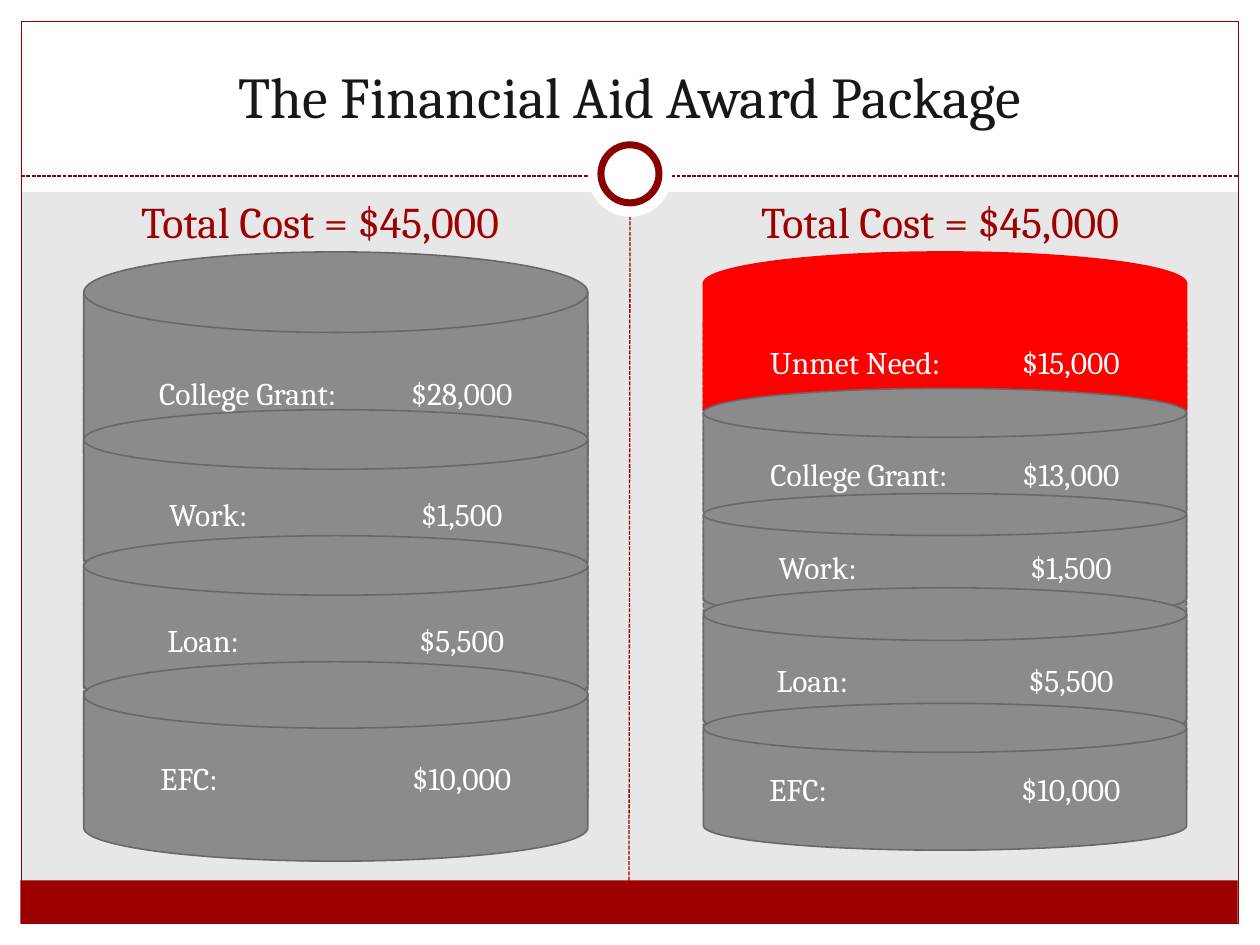
from lxml import etree
from pptx import Presentation
from pptx import util as u
from pptx.dml.color import RGBColor
from pptx.enum import dml, shapes, text
from pptx.oxml.ns import qn

FONT = "Cambria"
WHITE, RED, DARK_RED = "FFFFFF", "9C0000", "8A0000"
GRAY, EDGE, CAN_EDGE, UNMET = "8B8B8B", "686868", "676767", "FF0000"
W, H, MARGIN = 25.4, 19.05, 0.43
FOOTER_TOP = 17.75
STACK_TOP, CAN_TOP = 5.08, 5.29
TAB = 2.54

# Each stack: left, width, can height, heading left, layers (top, height, label, fill, edge)
STACKS = [
    (1.69, 10.16, 12.07, 0.84, [
        (STACK_TOP, 4.87, "College Grant:\t$28,000", GRAY, EDGE),
        (8.26, 3.6, "Work:\t\t$1,500", GRAY, EDGE),
        (10.8, 3.6, "Loan:\t\t$5,500", GRAY, EDGE),
        (13.34, 4.02, "EFC:\t\t$10,000", GRAY, EDGE),
    ]),
    (14.18, 9.74, 11.85, 13.34, [
        (STACK_TOP, 3.81, "Unmet Need:\t$15,000", UNMET, UNMET),
        (7.83, 2.96, "College Grant:\t$13,000", GRAY, EDGE),
        (9.95, 2.54, "Work:\t\t$1,500", GRAY, EDGE),
        (11.85, 3.18, "Loan:\t\t$5,500", GRAY, EDGE),
        (14.18, 2.96, "EFC:\t\t$10,000", GRAY, EDGE),
    ]),
]


def rgb(value):
    return RGBColor.from_string(value)


def set_line(line, color, width, dashed=False):
    line.color.rgb = rgb(color)
    line.width = u.Pt(width)
    if dashed:
        line.dash_style = dml.MSO_LINE.SQUARE_DOT


def add_shape(s, kind, box, fill=None, line=None):
    sp = s.shapes.add_shape(getattr(shapes.MSO_SHAPE, kind), *map(u.Cm, box))
    sp.shadow.inherit = False
    if fill:
        sp.fill.solid()
        sp.fill.fore_color.rgb = rgb(fill)
    else:
        sp.fill.background()
    if line:
        set_line(sp.line, *line)
    else:
        sp.line.fill.background()
    return sp


def add_dashed_line(s, start, end, color):
    line = s.shapes.add_connector(
        shapes.MSO_CONNECTOR.STRAIGHT, *map(u.Cm, start + end))
    set_line(line.line, color, 0.75, True)
    etree.SubElement(line._element.spPr, qn("a:effectLst"))
    return line


def write(sp, words, size, color, anchor="MIDDLE", before=0):
    tf = sp.text_frame
    tf.word_wrap = True
    tf.vertical_anchor = getattr(text.MSO_ANCHOR, anchor)
    p = tf.paragraphs[0]
    p.alignment = text.PP_ALIGN.CENTER
    p.space_before = u.Pt(before)
    p._p.get_or_add_pPr().set("defTabSz", str(u.Cm(TAB)))
    r = p.add_run()
    r.text = words
    r.font.color.rgb = rgb(color)
    for name, value in {"name": FONT, "size": u.Pt(size)}.items():
        setattr(r.font, name, value)


def add_text(s, box, *args):
    write(s.shapes.add_textbox(*map(u.Cm, box)), *args)


def add_frame(s):
    # White bands around the gray area
    for box in [(0, H - MARGIN, W, MARGIN), (0, 0, W, 3.87),
                (0, 0, MARGIN, H), (W - MARGIN, 0, MARGIN, H)]:
        add_shape(s, "RECTANGLE", box, WHITE)

    # Footer bar and border
    inner = W - 2 * MARGIN
    footer = add_shape(s, "RECTANGLE", (0.41, FOOTER_TOP, inner, 0.87), RED)
    add_shape(s, "RECTANGLE", (MARGIN, MARGIN, inner, H - 2 * MARGIN),
              line=(DARK_RED, 0.75))

    # Dividers and the ring where they meet
    add_dashed_line(s, (MARGIN, 3.55), (W - MARGIN, 3.55), DARK_RED)
    for size, top, line in [(1.7, 2.67, None), (1.17, 2.92, (DARK_RED, 4))]:
        add_shape(s, "OVAL", ((W - size) / 2, top, size, size), WHITE, line)
    divider = add_dashed_line(s, (W / 2, FOOTER_TOP), (W / 2, 4.37), RED)
    divider.begin_connect(footer, 0)


def add_stack(s, left, width, can_height, layers):
    add_shape(s, "CAN", (left, CAN_TOP, width, can_height), GRAY,
              (CAN_EDGE, 0.9, True))
    for top, height, label, fill, edge in layers:
        sp = add_shape(s, "FLOWCHART_MAGNETIC_DISK",
                       (left, top, width, height), fill, (edge, 0.9))
        write(sp, label, 18, WHITE)


def main():
    prs = Presentation()
    prs.slide_width, prs.slide_height = u.Cm(W), u.Cm(H)
    s = prs.slides.add_slide(prs.slide_layouts[6])
    s.background.fill.solid()
    s.background.fill.fore_color.rgb = rgb("E7E7E7")
    add_frame(s)

    # Title
    add_text(s, (0.85, 0.62, 23.7, 2.12), "The Financial Aid Award Package",
             33, "171717", "BOTTOM")

    # Headings and stacks
    for left, width, can_height, heading_left, layers in STACKS:
        add_text(s, (heading_left, 3.81, 11.22, 13.01),
                 "Total Cost = $45,000", 25, RED, "TOP", 5)
        add_stack(s, left, width, can_height, layers)

    prs.save("out.pptx")


if __name__ == "__main__":
    main()
